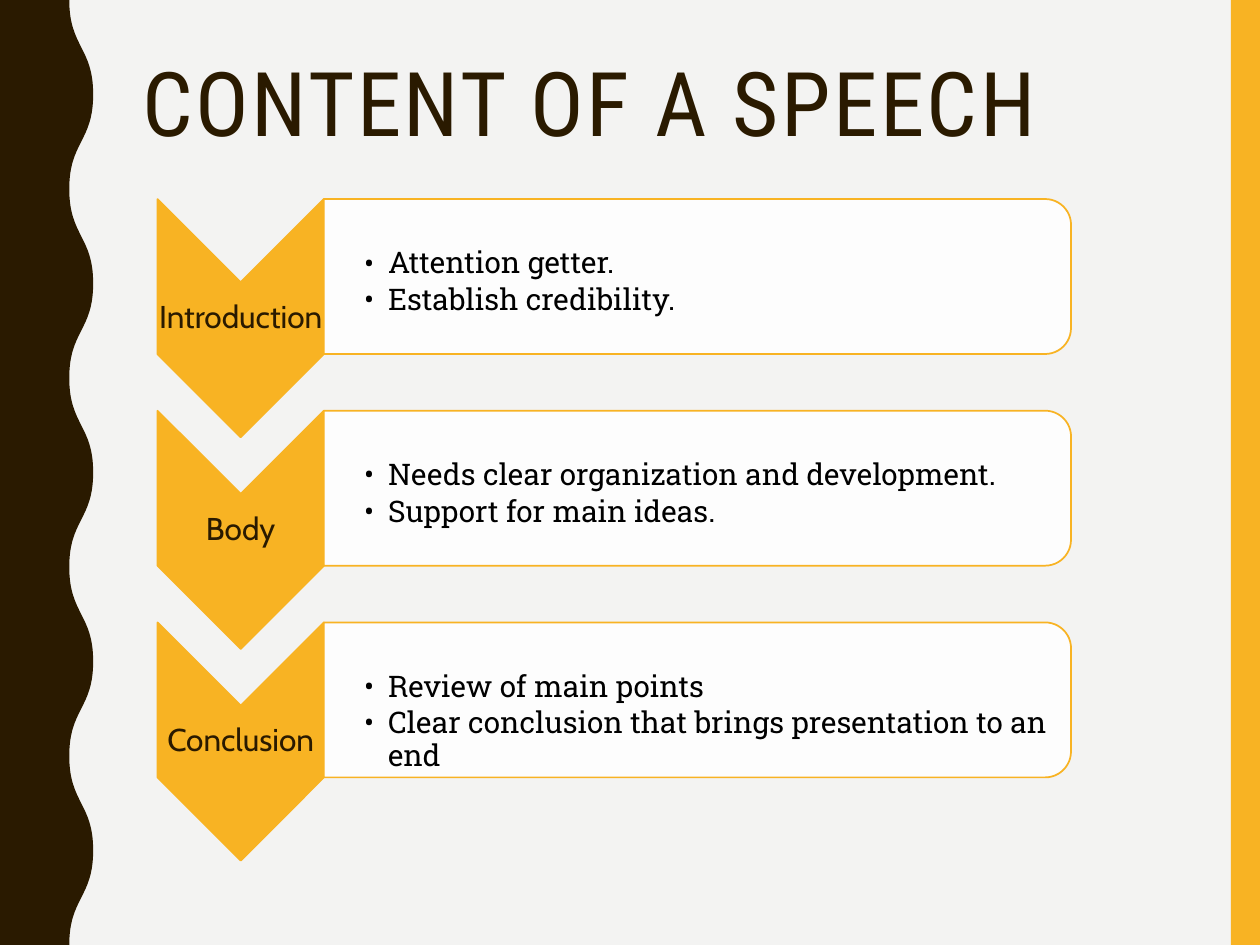
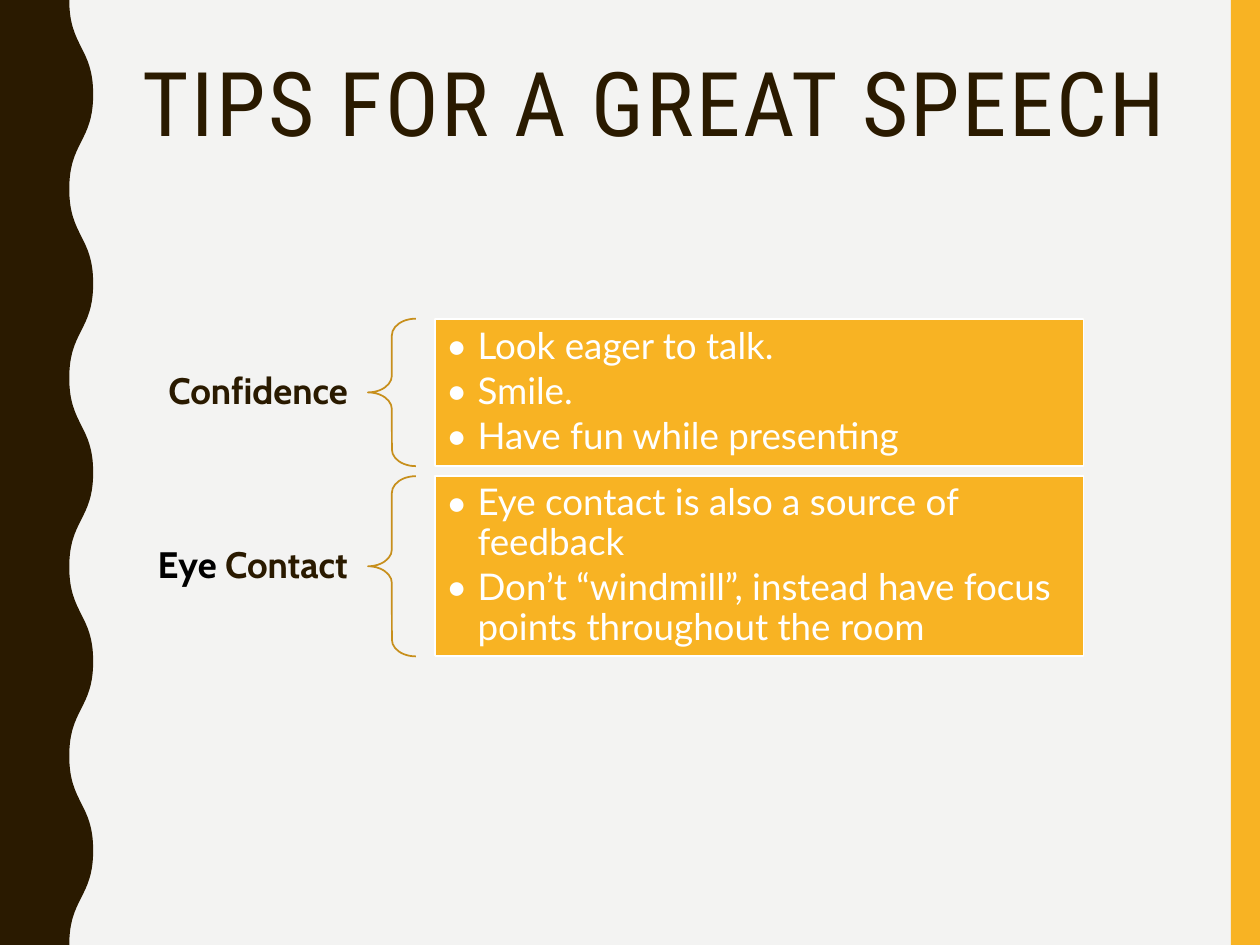
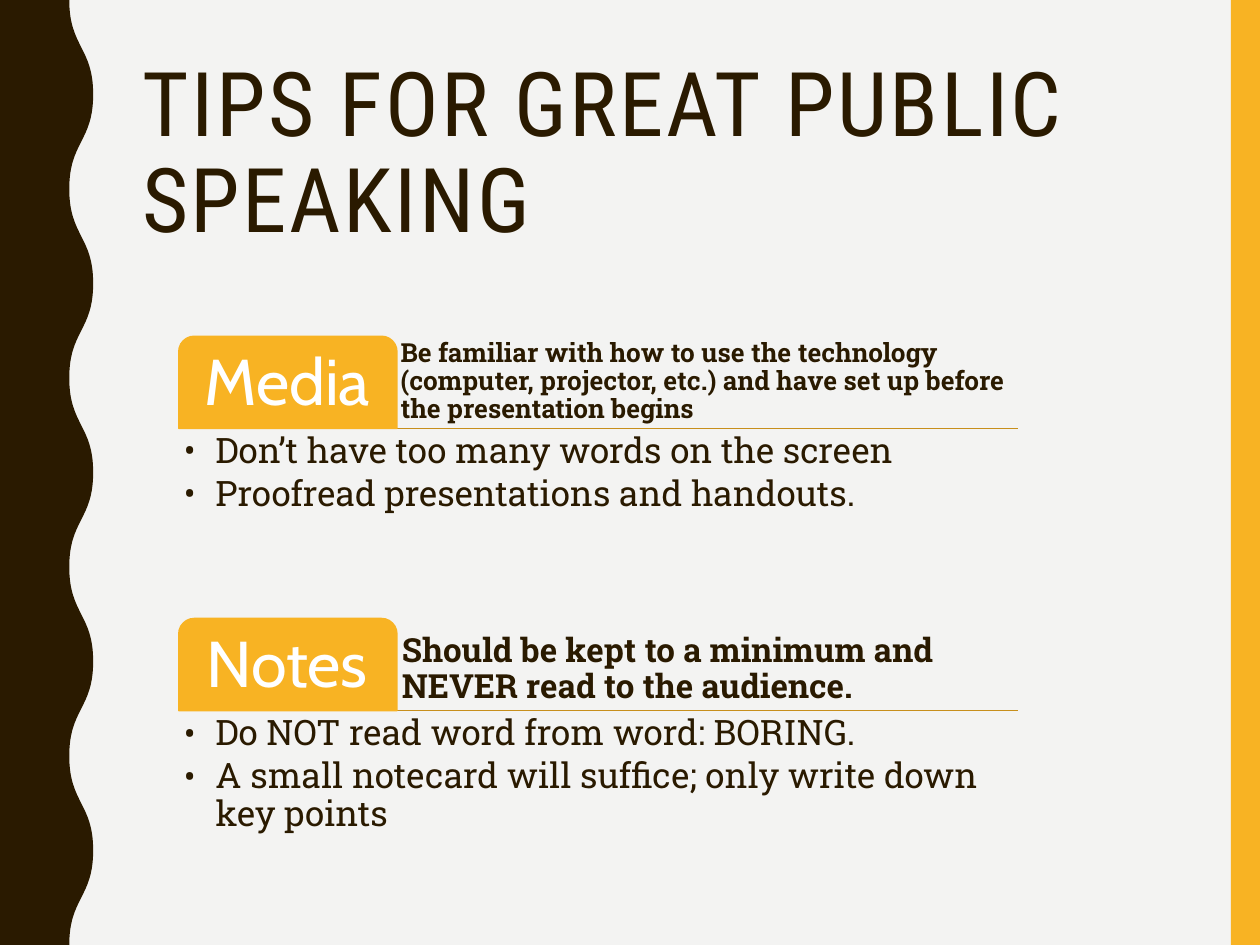
from dataclasses import dataclass
from typing import NamedTuple, Sequence

from lxml.etree import SubElement
from pptx import Presentation
from pptx.dml.color import RGBColor
from pptx.enum.shapes import MSO_CONNECTOR, MSO_SHAPE
from pptx.enum.text import MSO_ANCHOR, PP_ALIGN
from pptx.oxml.ns import qn
from pptx.shapes.autoshape import Shape
from pptx.slide import Slide
from pptx.text.text import TextFrame
from pptx.util import Inches, Pt

PAPER = RGBColor(0xF3, 0xF3, 0xF2)
GOLD = RGBColor(0xF8, 0xB3, 0x23)
BRONZE = RGBColor(0xC7, 0x8F, 0x1C)
BROWN = RGBColor(0x2A, 0x1A, 0x00)
BLACK = RGBColor(0, 0, 0)
WHITE = RGBColor(0xFF, 0xFF, 0xFF)

WIDTH, HEIGHT = 10, 7.5
LINE_SPACING = 0.9
BULLET_GAP = 0.15


class Box(NamedTuple):
    left: float
    top: float
    width: float
    height: float

    def lengths(self) -> list[int]:
        return [Inches(side) for side in self]


class Margins(NamedTuple):
    left: float
    top: float
    right: float
    bottom: float


@dataclass(frozen=True)
class TextStyle:
    size: float
    font: str
    color: RGBColor
    bold: bool = False
    align: PP_ALIGN = PP_ALIGN.LEFT
    anchor: MSO_ANCHOR = MSO_ANCHOR.TOP
    margins: Margins = Margins(0.1, 0.05, 0.1, 0.05)
    indent: float = 0
    hanging: float = 0
    tracking: float = 0


class Part(NamedTuple):
    label: str
    points: tuple[str, ...]


class Span(NamedTuple):
    text: str
    color: RGBColor


class Tip(NamedTuple):
    label: tuple[Span, ...]
    label_height: float
    height: float
    points: tuple[str, ...]


class Topic(NamedTuple):
    label: str
    advice: str
    advice_size: float
    advice_margin: float
    points: tuple[str, ...]


def even(margin: float) -> Margins:
    return Margins(margin, margin, margin, margin)


TITLE = TextStyle(51, "Roboto Condensed", BROWN, tracking=1.5)
PART_LABEL = TextStyle(18, "Cabin", BROWN, align=PP_ALIGN.CENTER,
                       anchor=MSO_ANCHOR.MIDDLE, margins=even(0.01))
PART_POINTS = TextStyle(17, "Roboto Slab", BLACK, indent=0.38, hanging=0.19,
                        margins=Margins(0.13, 0.33, 0.01, 0.01))
TIP_POINTS = TextStyle(21, "Lato", WHITE, anchor=MSO_ANCHOR.MIDDLE,
                       margins=even(0.09), indent=0.25, hanging=0.25)
TOPIC_LABEL = TextStyle(37, "Cabin", WHITE, align=PP_ALIGN.CENTER,
                        anchor=MSO_ANCHOR.MIDDLE, margins=even(0.08))
TOPIC_POINTS = TextStyle(20, "Roboto Slab", BROWN, margins=even(0.04),
                         indent=0.25, hanging=0.25)

PARTS = (
    Part("Introduction", ("Attention getter.", "Establish credibility.")),
    Part("Body", ("Needs clear organization and development.",
                  "Support for main ideas.")),
    Part("Conclusion", ("Review of main points",
                        "Clear conclusion that brings presentation to an end")),
)
TIPS = (
    Tip((Span("Confidence", BROWN),), 0.45, 1.17,
        ("Look eager to talk.", "Smile.", "Have fun while presenting")),
    Tip((Span("Eye ", BLACK), Span("Contact", BROWN)), 0.74, 1.43,
        ("Eye contact is also a source of feedback",
         "Don’t “windmill”, instead have focus points throughout the room")),
)
TOPICS = (
    Topic("Media",
          "Be familiar with how to use the technology (computer, projector, "
          "etc.) and have set up before the presentation begins", 15, 0.03,
          ("Don’t have too many words on the screen",
           "Proofread presentations and handouts.")),
    Topic("Notes",
          "Should be kept to a minimum and NEVER read to the audience.", 19, 0.04,
          ("Do NOT read word from word: BORING.",
           "A small notecard will suffice; only write down key points")),
)


def style_run(run, style: TextStyle, color: RGBColor) -> None:
    run.font.size = Pt(style.size)
    run.font.name = style.font
    run.font.bold = style.bold
    run.font.color.rgb = color
    if style.tracking:
        run.font._element.set("spc", str(int(style.tracking * 100)))


def write_text(frame: TextFrame, lines: Sequence[str], style: TextStyle) -> None:
    frame.word_wrap = True
    frame.vertical_anchor = style.anchor
    (frame.margin_left, frame.margin_top,
     frame.margin_right, frame.margin_bottom) = map(Inches, style.margins)
    frame.text = "\n".join(lines)
    for paragraph in frame.paragraphs:
        paragraph.alignment = style.align
        paragraph.line_spacing = LINE_SPACING
        if style.hanging:
            paragraph.space_after = Pt(style.size * BULLET_GAP)
            properties = paragraph._p.get_or_add_pPr()
            properties.set("marL", str(Inches(style.indent)))
            properties.set("indent", str(-Inches(style.hanging)))
            SubElement(properties, qn("a:buFont")).set("typeface", style.font)
            SubElement(properties, qn("a:buChar")).set("char", "•")
        for run in paragraph.runs:
            style_run(run, style, style.color)


def add_text(slide: Slide, box: Box, lines: Sequence[str],
             style: TextStyle) -> TextFrame:
    frame = slide.shapes.add_textbox(*box.lengths()).text_frame
    write_text(frame, lines, style)
    return frame


def paint(shape: Shape, fill: RGBColor | None, line: RGBColor | None) -> None:
    shape.shadow.inherit = False
    if fill is None:
        shape.fill.background()
    else:
        shape.fill.solid()
        shape.fill.fore_color.rgb = fill
    if line is None:
        shape.line.fill.background()
    else:
        shape.line.color.rgb = line
        shape.line.width = Pt(1)


def add_panel(slide: Slide, kind: MSO_SHAPE, box: Box, fill: RGBColor | None,
              line: RGBColor | None) -> Shape:
    panel = slide.shapes.add_shape(kind, *box.lengths())
    paint(panel, fill, line)
    return panel


def add_turned_panel(slide: Slide, kind: MSO_SHAPE, box: Box,
                     fill: RGBColor) -> Shape:
    shift = (box.width - box.height) / 2
    unturned = Box(box.left + shift, box.top - shift, box.height, box.width)
    panel = add_panel(slide, kind, unturned, fill, GOLD)
    panel.rotation = 90
    return panel


def add_wave(slide: Slide) -> None:
    trough, crest, half_wave = 0.55, 0.74, 0.75
    count = round(HEIGHT / half_wave)
    turns = [(Inches(crest if index % 2 else trough), Inches(half_wave * index))
             for index in range(count + 1)]
    outline = slide.shapes.build_freeform(*turns[0])
    outline.add_line_segments([*turns[1:], (0, Inches(HEIGHT)), (0, 0)], close=True)
    wave = outline.convert_to_shape()
    paint(wave, BROWN, None)
    sides = list(wave._element.iter(qn("a:lnTo")))[:count]
    for side, (start_x, start_y), (end_x, end_y) in zip(sides, turns, turns[1:]):
        middle = (start_y + end_y) // 2
        side.tag = qn("a:cubicBezTo")
        side.remove(side[0])
        for x, y in ((start_x, middle), (end_x, middle), (end_x, end_y)):
            point = SubElement(side, qn("a:pt"))
            point.set("x", str(x))
            point.set("y", str(y))


def add_titled_slide(deck, title: str) -> Slide:
    slide = deck.slides.add_slide(deck.slide_layouts[6])
    slide.background.fill.solid()
    slide.background.fill.fore_color.rgb = PAPER
    add_panel(slide, MSO_SHAPE.RECTANGLE, Box(9.77, 0, 0.23, HEIGHT), GOLD, None)
    add_wave(slide)
    add_text(slide, Box(1.03, 0.42, 8.35, 1.63), [title], TITLE)
    return slide


def draw_part(slide: Slide, part: Part, top: float) -> None:
    add_turned_panel(slide, MSO_SHAPE.CHEVRON, Box(1.25, top, 1.32, 1.89), GOLD)
    add_text(slide, Box(1.25, top + 0.66, 1.32, 0.57), [part.label], PART_LABEL)
    card = add_turned_panel(slide, MSO_SHAPE.ROUND_2_SAME_RECTANGLE,
                            Box(2.57, top, 5.93, 1.23), WHITE)
    white = card._element.spPr.find(qn("a:solidFill"))[0]
    SubElement(white, qn("a:alpha")).set("val", "90000")
    add_text(slide, Box(2.57, top + 0.06, 5.87, 1.11), part.points, PART_POINTS)


def draw_tip(slide: Slide, tip: Tip, top: float) -> None:
    first, *others = tip.label
    style = TextStyle(21, "Cabin", first.color, bold=True, align=PP_ALIGN.RIGHT,
                      anchor=MSO_ANCHOR.MIDDLE,
                      margins=Margins(0.16, 0.06, 0.16, 0.06))
    label_top = top + (tip.height - tip.label_height) / 2
    label = add_text(slide, Box(1.03, label_top, 1.89, tip.label_height),
                     [first.text], style)
    for span in others:
        run = label.paragraphs[0].add_run()
        run.text = span.text
        style_run(run, style, span.color)
    brace = add_panel(slide, MSO_SHAPE.LEFT_BRACE,
                      Box(2.92, top, 0.38, tip.height), None, BRONZE)
    brace.adjustments[0] = 0.35
    card = Box(3.45, top, 5.15, tip.height)
    add_panel(slide, MSO_SHAPE.RECTANGLE, card, GOLD, WHITE)
    add_text(slide, card, tip.points, TIP_POINTS)


def draw_topic(slide: Slide, topic: Topic, top: float) -> None:
    left, right, tab_width, tab_height = 1.42, 8.08, 1.73, 0.73
    base = top + tab_height
    rule = slide.shapes.add_connector(MSO_CONNECTOR.STRAIGHT, Inches(left),
                                      Inches(base), Inches(right), Inches(base))
    rule.line.color.rgb = BRONZE
    rule.line.width = Pt(1)
    SubElement(rule._element.spPr, qn("a:effectLst"))
    advice = TextStyle(topic.advice_size, "Roboto Slab", BROWN, bold=True,
                       anchor=MSO_ANCHOR.BOTTOM, margins=even(topic.advice_margin))
    add_text(slide, Box(left + tab_width, top, 4.93, tab_height),
             [topic.advice], advice)
    add_panel(slide, MSO_SHAPE.ROUND_2_SAME_RECTANGLE,
              Box(left, top, tab_width, tab_height), GOLD, GOLD)
    add_text(slide, Box(left + 0.03, top + 0.03, 1.66, 0.7),
             [topic.label], TOPIC_LABEL)
    add_text(slide, Box(left, base, 6.67, 1.47), topic.points, TOPIC_POINTS)


def main() -> None:
    deck = Presentation()
    deck.slide_width = Inches(WIDTH)
    deck.slide_height = Inches(HEIGHT)

    content = add_titled_slide(deck, "CONTENT OF A SPEECH")
    for row, part in enumerate(PARTS):
        draw_part(content, part, 1.58 + 1.68 * row)

    speech = add_titled_slide(deck, "TIPS FOR A GREAT SPEECH")
    top = 2.53
    for tip in TIPS:
        draw_tip(speech, tip, top)
        top += tip.height + 0.08

    speaking = add_titled_slide(deck, "TIPS FOR GREAT PUBLIC SPEAKING")
    for row, topic in enumerate(TOPICS):
        draw_topic(speaking, topic, 2.67 + 2.24 * row)

    deck.save("out.pptx")


if __name__ == "__main__":
    main()
